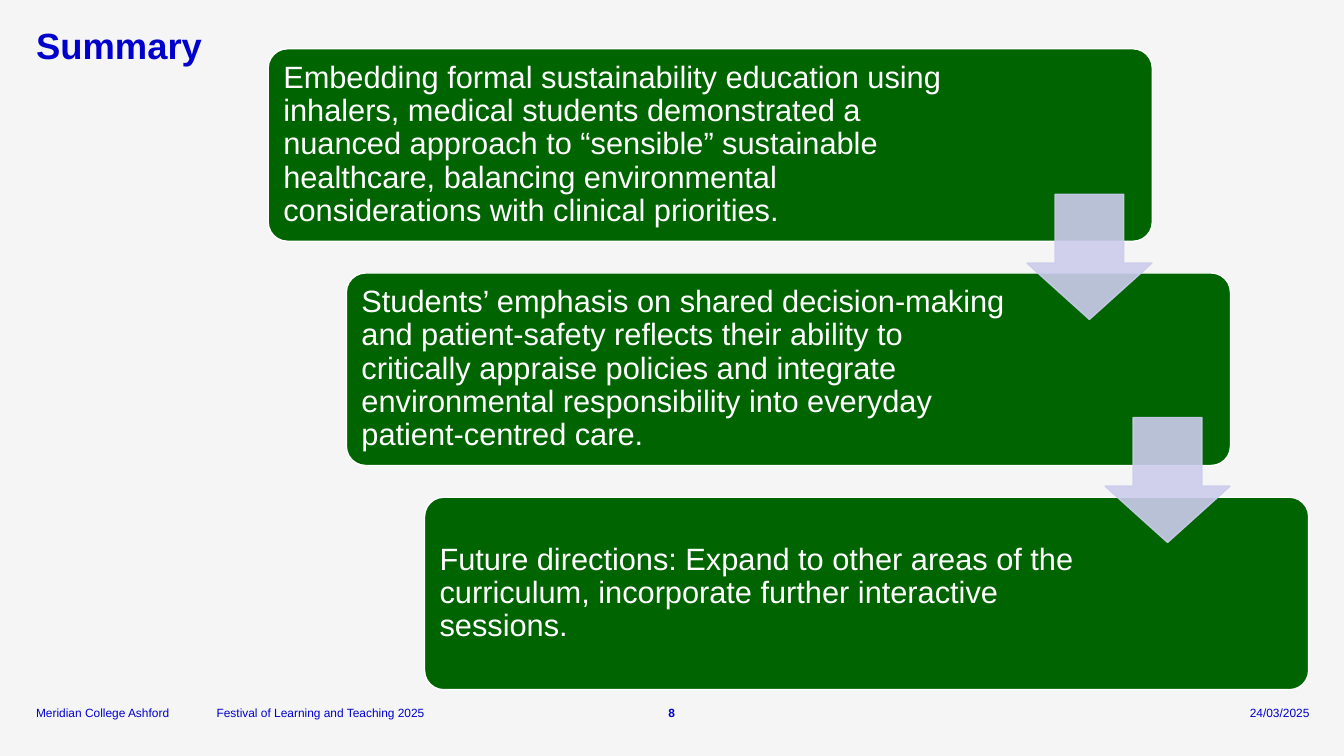
from dataclasses import dataclass

from lxml.etree import SubElement
from pptx import Presentation
from pptx.dml.color import RGBColor
from pptx.enum.shapes import MSO_SHAPE
from pptx.enum.text import MSO_ANCHOR, PP_ALIGN
from pptx.oxml.ns import qn
from pptx.shapes.autoshape import Shape
from pptx.slide import Slide
from pptx.util import Cm, Pt


@dataclass(frozen=True)
class Theme:
    font: str = "Arial"
    paper: str = "F5F5F5"
    ink: str = "0000CD"
    card: str = "006400"
    light: str = "FFFFFF"
    arrow: str = "CCCCED"
    head: float = 26
    body: float = 22
    foot: float = 8.5


@dataclass(frozen=True)
class Box:
    left: float
    top: float
    width: float
    height: float

    def shift(self, right: float, down: float) -> "Box":
        return Box(self.left + right, self.top + down, self.width, self.height)

    def place(self) -> tuple[Cm, Cm, Cm, Cm]:
        return Cm(self.left), Cm(self.top), Cm(self.width), Cm(self.height)


@dataclass(frozen=True)
class Step:
    text: str
    width: float


@dataclass(frozen=True)
class Note:
    text: str
    left: float
    width: float
    align: PP_ALIGN = PP_ALIGN.LEFT
    bold: bool = False


THEME = Theme()
CARD = Box(6.76, 1.23, 22.28, 4.85)
ARROW = Box(25.88, 4.9, 3.15, 3.15)
RIGHT = 1.97
DOWN = 5.65
DROP = 5.62
PAD = 0.15

STEPS = [
    Step("Embedding formal sustainability education using inhalers, medical students "
         "demonstrated a nuanced approach to “sensible” sustainable healthcare, "
         "balancing environmental considerations with clinical priorities.", 17.04),
    Step("Students’ emphasis on shared decision-making and patient-safety reflects "
         "their ability to critically appraise policies and integrate environmental "
         "responsibility into everyday patient-centred care.", 16.87),
    Step("Future directions: Expand to other areas of the curriculum, incorporate "
         "further interactive sessions.", 16.87),
]

NOTES = [
    Note("Meridian College Ashford", 0.91, 3.94),
    Note("Festival of Learning and Teaching 2025", 5.46, 9.5),
    Note("8", 16.48, 0.89, PP_ALIGN.CENTER, True),
    Note("24/03/2025", 29.57, 3.43, PP_ALIGN.RIGHT),
]


def write(slide: Slide, text: str, box: Box, *, size: float, color: str,
          bold: bool = False, align: PP_ALIGN = PP_ALIGN.LEFT,
          anchor: MSO_ANCHOR = MSO_ANCHOR.TOP, inset: float = 0,
          line: float = 1.0) -> None:
    frame = slide.shapes.add_textbox(*box.place()).text_frame
    frame.word_wrap = True
    frame.vertical_anchor = anchor
    frame.margin_left = frame.margin_right = Cm(inset)
    frame.margin_top = frame.margin_bottom = Cm(inset)
    para = frame.paragraphs[0]
    para.alignment = align
    para.line_spacing = line
    run = para.add_run()
    run.text = text
    run.font.name = THEME.font
    run.font.size = Pt(size)
    run.font.bold = bold
    run.font.color.rgb = RGBColor.from_string(color)


def draw(slide: Slide, kind: MSO_SHAPE, box: Box, fill: str, line: str,
         *ratios: float) -> Shape:
    shape = slide.shapes.add_shape(kind, *box.place())
    shape.shadow.inherit = False
    shape.fill.solid()
    shape.fill.fore_color.rgb = RGBColor.from_string(fill)
    shape.line.color.rgb = RGBColor.from_string(line)
    shape.line.width = Pt(1)
    for index, ratio in enumerate(ratios):
        shape.adjustments[index] = ratio
    return shape


def fade(shape: Shape, percent: int) -> None:
    for color in shape.element.iter(qn("a:srgbClr")):
        SubElement(color, qn("a:alpha")).set("val", str(percent * 1000))


def main() -> None:
    deck = Presentation()
    deck.slide_width, deck.slide_height = Cm(33.87), Cm(19.05)
    slide = deck.slides.add_slide(deck.slide_layouts[6])
    slide.background.fill.solid()
    slide.background.fill.fore_color.rgb = RGBColor.from_string(THEME.paper)

    write(slide, "Summary", Box(0.91, 0.71, 32.06, 1.04), size=THEME.head,
          color=THEME.ink, bold=True, line=0.9)
    for note in NOTES:
        write(slide, note.text, Box(note.left, 17.75, note.width, 0.38),
              size=THEME.foot, color=THEME.ink, bold=note.bold,
              align=note.align, anchor=MSO_ANCHOR.BOTTOM)

    for index, step in enumerate(STEPS):
        card = CARD.shift(index * RIGHT, index * DOWN)
        draw(slide, MSO_SHAPE.ROUNDED_RECTANGLE, card, THEME.card, THEME.light, 0.1)
        area = Box(card.left + PAD, card.top + PAD, step.width, card.height - 2 * PAD)
        write(slide, step.text, area, size=THEME.body, color=THEME.light,
              anchor=MSO_ANCHOR.MIDDLE, inset=0.23, line=0.9)

    for index in range(len(STEPS) - 1):
        arrow = draw(slide, MSO_SHAPE.DOWN_ARROW,
                     ARROW.shift(index * RIGHT, index * DROP),
                     THEME.arrow, THEME.arrow, 0.55, 0.45)
        fade(arrow, 90)

    deck.save("out.pptx")


if __name__ == "__main__":
    main()
